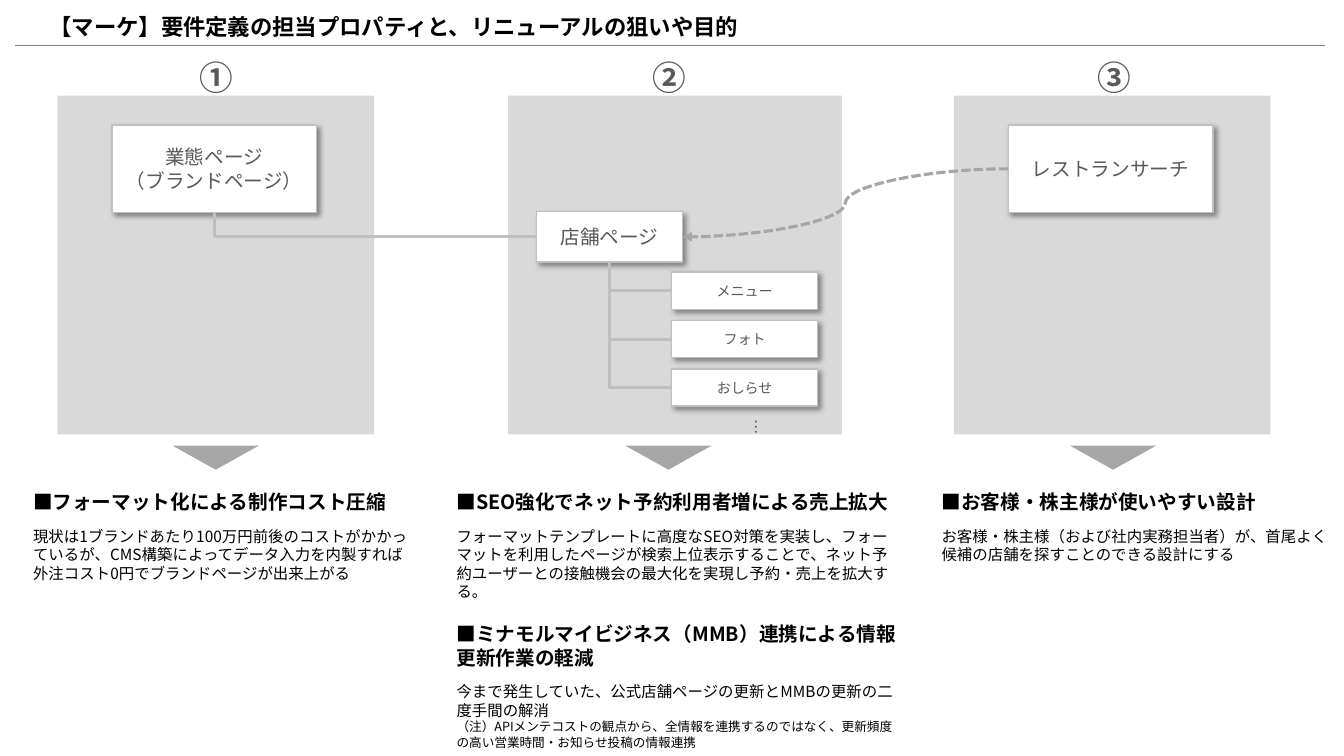
import dataclasses

import lxml.etree
import pptx
import pptx.dml.color
import pptx.enum.dml
import pptx.enum.shapes
import pptx.enum.text
import pptx.oxml.ns
import pptx.util

SLIDE_COLUMNS, SLIDE_ROWS = 133.3, 75
CELL = pptx.util.Inches(0.1)
FONT = "Noto Sans CJK JP"
BLACK, DARK, WHITE = "000000", "595959", "FFFFFF"
PANEL, BORDER, ARROW, RULE = "D9D9D9", "BFBFBF", "A6A6A6", "808080"
SHAPES = pptx.enum.shapes.MSO_SHAPE
CONNECTORS = pptx.enum.shapes.MSO_CONNECTOR
ALIGN = pptx.enum.text.PP_ALIGN
ANCHOR = pptx.enum.text.MSO_ANCHOR
AUTO_SIZE = pptx.enum.text.MSO_AUTO_SIZE
TOP_SITE, LEFT_SITE, BOTTOM_SITE, RIGHT_SITE = range(4)


@dataclasses.dataclass
class Box:
    left: float
    top: float
    width: float
    height: float

    def inner(self, across, down, width, height):
        return Box(self.left + across, self.top + down, width, height)

    def lengths(self):
        return [int(cells * CELL) for cells in dataclasses.astuple(self)]


def color(hex_string):
    return pptx.dml.color.RGBColor.from_string(hex_string)


def add_xml(parent, tag, **attributes):
    element = lxml.etree.SubElement(parent, pptx.oxml.ns.qn(tag))
    for name, value in attributes.items():
        element.set(name, str(value))
    return element


def write_paragraph(paragraph, text, size, hex_string=BLACK, bold=False, align=ALIGN.LEFT):
    paragraph.text = text
    paragraph.alignment = align
    for run in paragraph.runs:
        run.font.size = pptx.util.Pt(size)
        run.font.bold = bold
        run.font.name = FONT
        run.font.color.rgb = color(hex_string)
        add_xml(run.font._element, "a:ea", typeface=FONT)


def add_text_box(slide, box, wrap=True):
    shape = slide.shapes.add_textbox(*box.lengths())
    shape.text_frame.word_wrap = wrap
    shape.text_frame.auto_size = AUTO_SIZE.SHAPE_TO_FIT_TEXT
    return shape.text_frame


def add_plain_shape(slide, kind, box, fill):
    shape = slide.shapes.add_shape(kind, *box.lengths())
    shape.shadow.inherit = False
    shape.fill.solid()
    shape.fill.fore_color.rgb = color(fill)
    shape.line.fill.background()
    return shape


def add_card(slide, box, lines, size):
    card = add_plain_shape(slide, SHAPES.RECTANGLE, box, WHITE)
    card.line.color.rgb = color(BORDER)
    card.line.width = pptx.util.Pt(1)
    effects = card._element.spPr.find(pptx.oxml.ns.qn("a:effectLst"))
    shadow = add_xml(effects, "a:outerShdw", blurRad=pptx.util.Pt(4), dist=pptx.util.Pt(3),
                     dir=45 * 60000, algn="tl", rotWithShape=0)
    shade = add_xml(shadow, "a:srgbClr", val=BLACK)
    add_xml(shade, "a:alpha", val=40000)
    frame = card.text_frame
    frame.vertical_anchor = ANCHOR.MIDDLE
    for index, line in enumerate(lines):
        paragraph = frame.add_paragraph() if index else frame.paragraphs[0]
        write_paragraph(paragraph, line, size, DARK, align=ALIGN.CENTER)
    return card


def add_line(slide, kind, hex_string, width, ends=(0, 0, 0, 0)):
    connector = slide.shapes.add_connector(kind, *ends)
    connector.line.color.rgb = color(hex_string)
    connector.line.width = pptx.util.Pt(width)
    add_xml(connector._element.spPr, "a:effectLst")
    return connector


def add_branch(slide, parent, child):
    branch = add_line(slide, CONNECTORS.ELBOW, BORDER, 2.25)
    branch.begin_connect(parent, BOTTOM_SITE)
    branch.end_connect(child, LEFT_SITE)
    start_x, start_y = parent.left + parent.width // 2, parent.top + parent.height
    end_x, end_y = child.left, child.top + child.height // 2
    branch.width, branch.height = end_y - start_y, end_x - start_x
    branch.left = (start_x + end_x - branch.width) // 2
    branch.top = (start_y + end_y - branch.height) // 2
    properties = branch._element.spPr
    properties.find(pptx.oxml.ns.qn("a:prstGeom")).set("prst", "bentConnector2")
    transform = properties.find(pptx.oxml.ns.qn("a:xfrm"))
    transform.attrib.clear()
    transform.set("rot", str(270 * 60000))
    transform.set("flipH", "1")


def add_search_flow(slide, source, target):
    flow = add_line(slide, CONNECTORS.CURVE, ARROW, 2.25)
    flow.begin_connect(source, LEFT_SITE)
    flow.end_connect(target, RIGHT_SITE)
    flow.line.dash_style = pptx.enum.dml.MSO_LINE.SQUARE_DOT
    outline = flow._element.spPr.find(pptx.oxml.ns.qn("a:ln"))
    add_xml(outline, "a:tailEnd", type="triangle")


def add_header(slide, box):
    title = slide.shapes.title
    title.left, title.top, title.width, title.height = box.inner(3.9, 0.8, 74.9, 3.7).lengths()
    frame = title.text_frame
    frame.auto_size = AUTO_SIZE.NONE
    frame.vertical_anchor = ANCHOR.TOP
    write_paragraph(frame.paragraphs[0], "【マーケ】要件定義の担当プロパティと、リニューアルの狙いや目的",
                    16, bold=True)
    left, top, width, height = box.inner(1.5, box.height, 129.9, 0).lengths()
    add_line(slide, CONNECTORS.STRAIGHT, RULE, 0.5, (left, top, left + width, top + height))


def add_panel(slide, box, number, axis):
    add_plain_shape(slide, SHAPES.RECTANGLE, box, PANEL)
    frame = add_text_box(slide, box.inner(axis - 2.6, -4.3, 5.4, 5), wrap=False)
    write_paragraph(frame.paragraphs[0], number, 24, DARK, True, ALIGN.CENTER)
    arrow = add_plain_shape(slide, SHAPES.DOWN_ARROW,
                            box.inner(axis - 4.3, box.height + 1.1, 8.6, 2.4), ARROW)
    arrow.adjustments[0] = 0.5
    arrow.adjustments[1] = 1


def add_main_card(slide, box, lines):
    return add_card(slide, box.inner(5.4, 2.9, 20.3, 8.7), lines, 14)


def add_store_tree(slide, box):
    store = add_card(slide, box.inner(2.8, 11.5, 14.5, 5), ["店舗ページ"], 14)
    for row, label in enumerate(["メニュー", "フォト", "おしらせ"]):
        page = add_card(slide, box.inner(16.2, 17.5 + 4.8 * row, 14.5, 3.7), [label], 10)
        add_branch(slide, store, page)
    frame = add_text_box(slide, box.inner(22.2, 31.1, 3.9, 2.6), wrap=False)
    frame._txBody.bodyPr.set("vert", "eaVert")
    write_paragraph(frame.paragraphs[0], "…", 11, DARK)
    return store


def add_finding(slide, box, heading, body, note=None):
    frame = add_text_box(slide, box)
    write_paragraph(frame.paragraphs[0], "■" + heading, 14, bold=True)
    explanation = frame.add_paragraph()
    write_paragraph(explanation, body, 11)
    explanation.space_before = pptx.util.Pt(9.6)
    if note:
        write_paragraph(frame.add_paragraph(), note, 9)


def add_findings(slide, box):
    add_finding(slide, box.inner(2.3, 0, 39.6, 10.3), "フォーマット化による制作コスト圧縮",
                "現状は1ブランドあたり100万円前後のコストがかかっているが、"
                "CMS構築によってデータ入力を内製すれば外注コスト0円でブランドページが出来上がる")
    add_finding(slide, box.inner(44.3, 0, 45.7, 12.1), "SEO強化でネット予約利用者増による売上拡大",
                "フォーマットテンプレートに高度なSEO対策を実装し、フォーマットを利用したページが"
                "検索上位表示することで、ネット予約ユーザーとの接触機会の最大化を実現し予約・売上を拡大する。")
    add_finding(slide, box.inner(44.3, 13.1, 45.7, 13.8),
                "ミナモルマイビジネス（MMB）連携による情報更新作業の軽減",
                "今まで発生していた、公式店舗ページの更新とMMBの更新の二度手間の解消",
                "（注）APIメンテコストの観点から、全情報を連携するのではなく、"
                "更新頻度の高い営業時間・お知らせ投稿の情報連携")
    add_finding(slide, box.inner(92.4, 0, 41.2, 8.4), "お客様・株主様が使いやすい設計",
                "お客様・株主様（および社内実務担当者）が、首尾よく候補の店舗を探すことのできる設計にする")


def add_site_map(slide, box):
    brand_box = box.inner(5.7, 0, 31.4, box.height)
    store_box = box.inner(50.4, 0, 33.1, box.height)
    search_box = box.inner(94.6, 0, 31.4, box.height)
    add_panel(slide, brand_box, "①", 15.7)
    add_panel(slide, store_box, "②", 15.9)
    add_panel(slide, search_box, "③", 15.8)
    brand = add_main_card(slide, brand_box, ["業態ページ", "（ブランドページ）"])
    store = add_store_tree(slide, store_box)
    search = add_main_card(slide, search_box, ["レストランサーチ"])
    add_branch(slide, brand, store)
    add_search_flow(slide, search, store)


def main():
    presentation = pptx.Presentation()
    presentation.slide_width = int(SLIDE_COLUMNS * CELL)
    presentation.slide_height = int(SLIDE_ROWS * CELL)
    slide = presentation.slides.add_slide(presentation.slide_layouts[5])
    add_header(slide, Box(0, 0, SLIDE_COLUMNS, 4.5))
    add_site_map(slide, Box(0, 9.5, SLIDE_COLUMNS, 33.6))
    add_findings(slide, Box(0, 48.1, SLIDE_COLUMNS, 26.9))
    presentation.save("out.pptx")


if __name__ == "__main__":
    main()
